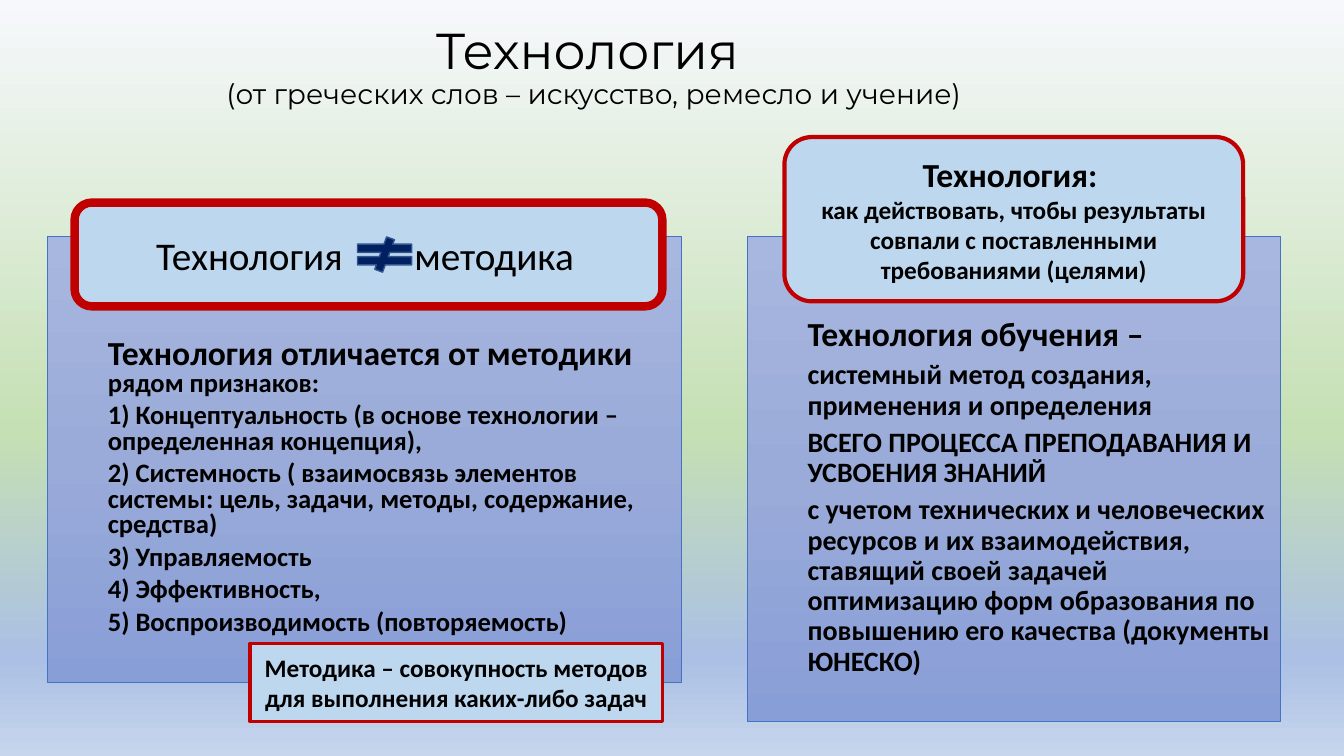
"""Build the slide that contrasts technology with methodology."""
from copy import deepcopy

from pptx import Presentation
from pptx import util as u
from pptx.dml.color import RGBColor
from pptx.enum import shapes, text
from pptx.oxml.ns import qn

BLACK = RGBColor(0x00, 0x00, 0x00)
NAVY = RGBColor(0x00, 0x20, 0x60)
NAVY_EDGE = RGBColor(0x32, 0x54, 0x91)
RED = RGBColor(0xC0, 0x00, 0x00)
SKY = RGBColor(0xBD, 0xD7, 0xEE)
PANEL_EDGE = RGBColor(0x44, 0x72, 0xC4)
PANEL_STOPS = [(0, RGBColor(0xA8, 0xB7, 0xDF)), (0.5, RGBColor(0x9A, 0xAB, 0xD9)),
               (1, RGBColor(0x88, 0x9E, 0xD7))]
BACKGROUND_STOPS = [(0, RGBColor(0xF6, 0xF8, 0xFC)), (0.57, RGBColor(0xC5, 0xE0, 0xB4)),
                    (0.87, RGBColor(0xAB, 0xC0, 0xE4)), (1, RGBColor(0xC7, 0xD5, 0xED))]
CENTER = text.PP_ALIGN.CENTER
MIDDLE = text.MSO_ANCHOR.MIDDLE
ROUNDED = shapes.MSO_SHAPE.ROUNDED_RECTANGLE


def apply(target, formats):
    for name, value in formats.items():
        setattr(target, name, value)


class SlideBuilder:
    def __init__(self, slide):
        self.slide = slide
        self.heading_font = "Montserrat"
        self.body_font = "Calibri"

    def place(self, part, box):
        names = ("left", "top", "width", "height")
        apply(part, dict(zip(names, map(u.Inches, box))))

    def gradient(self, fill, owner, stops):
        fill.gradient()
        fill.gradient_angle = 270
        stop_list = owner.xpath(".//a:gsLst")[0]
        for _ in stops[2:]:
            stop_list.append(deepcopy(stop_list[0]))
        for stop, (position, color) in zip(fill.gradient_stops, stops):
            stop.position = position
            stop.color.rgb = color

    def background(self, stops):
        self.gradient(self.slide.background.fill, self.slide.element, stops)

    def outline(self, part, color, width):
        part.line.color.rgb = color
        part.line.width = u.Pt(width)

    def run(self, paragraph, wording, size, bold=False, font=None):
        run = paragraph.add_run()
        run.text = wording
        apply(run.font, {"name": font or self.body_font, "size": u.Pt(size), "bold": bold})
        run.font.color.rgb = BLACK

    def add_text(self, frame, paragraphs, bold, formats):
        for index, runs in enumerate(paragraphs):
            paragraph = frame.add_paragraph() if index else frame.paragraphs[0]
            apply(paragraph, formats)
            for wording, size in runs:
                self.run(paragraph, wording, size, bold)

    def title(self, box, heading, subtitle):
        title = self.slide.shapes.title
        self.place(title, box)
        apply(title.text_frame, {"word_wrap": True, "auto_size": text.MSO_AUTO_SIZE.NONE,
                                 "vertical_anchor": MIDDLE, "margin_bottom": u.Inches(0.36)})
        paragraph = title.text_frame.paragraphs[0]
        apply(paragraph, {"alignment": CENTER, "line_spacing": 0.9})
        self.run(paragraph, heading, 36, font=self.heading_font)
        paragraph.add_line_break()
        self.run(paragraph, subtitle, 20, font=self.heading_font)

    def panel(self, index, box, paragraphs, spacing, top):
        panel = self.slide.placeholders[index]
        self.place(panel, box)
        self.gradient(panel.fill, panel.element, PANEL_STOPS)
        self.outline(panel, PANEL_EDGE, 0.5)
        apply(panel.text_frame, {"word_wrap": True, "auto_size": text.MSO_AUTO_SIZE.NONE,
                                 "vertical_anchor": text.MSO_ANCHOR.TOP,
                                 "margin_top": u.Inches(top)})
        self.add_text(panel.text_frame, paragraphs, True,
                      {"level": 1, "alignment": text.PP_ALIGN.LEFT,
                       "line_spacing": spacing, "space_before": u.Pt(5)})
        for paragraph in panel.text_frame.paragraphs:
            properties = paragraph._p.get_or_add_pPr()
            properties.set("marL", str(u.Inches(0.5)))
            properties.set("indent", "0")
            properties.append(properties.makeelement(qn("a:buNone"), {}))

    def shape(self, kind, box, fill, edge, width):
        shape = self.slide.shapes.add_shape(kind, *map(u.Inches, box))
        shape.shadow.inherit = False
        shape.fill.solid()
        shape.fill.fore_color.rgb = fill
        self.outline(shape, edge, width)
        return shape

    def callout(self, kind, box, width, paragraphs, bold=True, alignment=CENTER):
        callout = self.shape(kind, box, SKY, RED, width)
        apply(callout.text_frame, {"word_wrap": True, "vertical_anchor": MIDDLE})
        self.add_text(callout.text_frame, paragraphs, bold, {"alignment": alignment})
        return callout

    def comparison(self, box, first, second, start, gap):
        comparison = self.callout(ROUNDED, box, 6, [[(f"{first}\t{second}", 28)]],
                                  bold=False, alignment=text.PP_ALIGN.LEFT)
        comparison.text_frame.margin_left = u.Inches(start)
        properties = comparison.text_frame.paragraphs[0]._p.get_or_add_pPr()
        tabs = properties.makeelement(qn("a:tabLst"), {})
        tabs.append(tabs.makeelement(qn("a:tab"), {"pos": str(u.Inches(gap)), "algn": "l"}))
        properties.append(tabs)


def main():
    deck = Presentation()
    apply(deck, {"slide_width": u.Inches(13.33), "slide_height": u.Inches(7.5)})
    builder = SlideBuilder(deck.slides.add_slide(deck.slide_layouts[3]))
    builder.background(BACKGROUND_STOPS)
    builder.title((0.64, 0, 10.5, 1.67), "Технология ",
                  "(от греческих слов – искусство, ремесло и учение)")

    features = [
        "1) Концептуальность (в основе технологии – определенная концепция),",
        "2) Системность ( взаимосвязь элементов системы: цель, задачи, методы, "
        "содержание, средства)",
        "3) Управляемость",
        "4) Эффективность,",
        "5) Воспроизводимость (повторяемость)",
    ]
    differences = [[("Технология отличается от методики ", 24), ("рядом признаков:", 19)]]
    differences += [[(feature, 19)] for feature in features]
    builder.panel(1, (0.47, 2.34, 6.29, 4.43), differences, 0.8, 1.03)

    definition = [
        "системный метод создания, применения и определения",
        "ВСЕГО ПРОЦЕССА ПРЕПОДАВАНИЯ И УСВОЕНИЯ ЗНАНИЙ",
        "с учетом технических и человеческих ресурсов и их взаимодействия, ставящий "
        "своей задачей оптимизацию форм образования по повышению его качества "
        "(документы ЮНЕСКО)",
    ]
    teaching = [[("Технология обучения –", 24)]] + [[(phrase, 20)] for phrase in definition]
    builder.panel(2, (7.41, 2.34, 5.29, 4.82), teaching, 0.9, 0.81)

    builder.callout(ROUNDED, (7.78, 1.36, 4.55, 1.63), 3, [
        [("Технология: ", 24)],
        [("как действовать, чтобы результаты совпали с поставленными "
          "требованиями (целями)", 18)],
    ])
    builder.comparison((0.74, 2.01, 5.83, 1.03), "Технология", "методика", 0.76, 2.56)
    builder.shape(shapes.MSO_SHAPE.MATH_NOT_EQUAL, (3.45, 2.35, 0.73, 0.35),
                  NAVY, NAVY_EDGE, 1)
    builder.callout(shapes.MSO_SHAPE.RECTANGLE, (2.48, 6.38, 4.09, 0.78), 2.25, [
        [("Методика – совокупность методов для выполнения каких-либо задач", 18)],
    ])
    deck.save("out.pptx")


if __name__ == "__main__":
    main()
